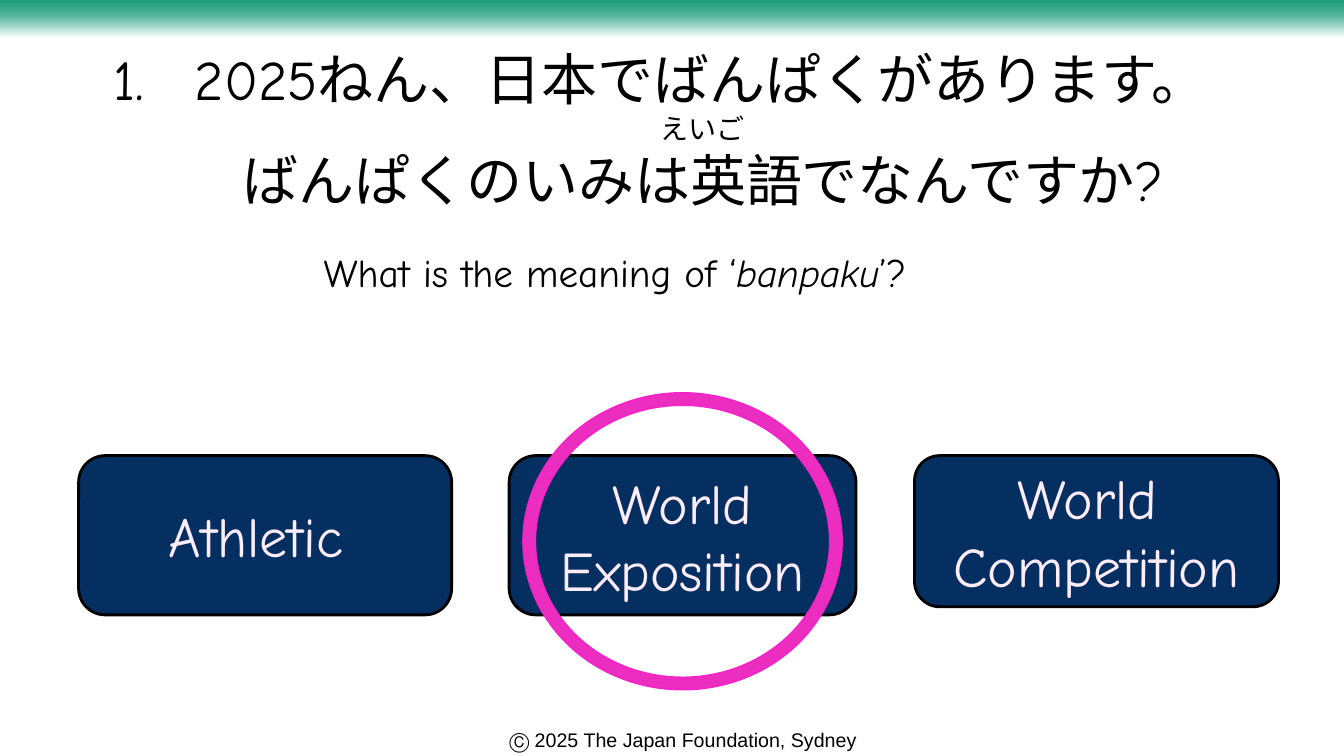
from copy import deepcopy
from lxml.etree import SubElement
from pptx import Presentation
from pptx.dml.color import RGBColor
from pptx.enum.shapes import MSO_SHAPE
from pptx.enum.text import MSO_ANCHOR, MSO_AUTO_SIZE, PP_ALIGN
from pptx.oxml.ns import qn
from pptx.util import Inches, Pt


def color(hex_code):
    return RGBColor.from_string(hex_code)


def add_text(paragraph, text, size, hex_code="000000", font="Comic Neue", italic=False):
    paragraph.alignment = PP_ALIGN.CENTER
    run = paragraph.add_run()
    run.text = text
    run.font.name = font
    run.font.size = Pt(size)
    run.font.italic = italic
    run.font.color.rgb = color(hex_code)


deck = Presentation()
deck.slide_width, deck.slide_height = Inches(13.33), Inches(7.5)
slide = deck.slides.add_slide(deck.slide_layouts[5])

# Background: white with a green band fading in at the top
background = slide.background.fill
background.gradient()
background.gradient_angle = 90
band = [(0.95, "FFFFFF"), (0.97, "87CBB9"), (0.98, "52B399"), (1, "1D9A78")]
stop_list = slide.element.find(".//" + qn("a:gsLst"))
for _ in band[2:]:
    stop_list.append(deepcopy(stop_list[0]))
for stop, (position, hex_code) in zip(background.gradient_stops, band):
    stop.color.rgb = color(hex_code)
    stop.position = position

# Copyright line
copyright_line = slide.shapes.add_textbox(Inches(2.65), Inches(7.17), Inches(8.25), Inches(0.33))
copyright_line.text_frame.word_wrap = True
copyright_line.text_frame.vertical_anchor = MSO_ANCHOR.MIDDLE
add_text(copyright_line.text_frame.paragraphs[0], "Ⓒ 2025 The Japan Foundation, Sydney", 14, font="Arial")

# Answer choices: left, width, height, lines
choices = [
    (0.78, 3.70, 1.58, ["Athletic "]),
    (5.05, 3.44, 1.58, ["World Exposition"]),
    (9.07, 3.61, 1.50, ["World ", "Competition"]),
]
for left, width, height, lines in choices:
    choice = slide.shapes.add_shape(
        MSO_SHAPE.ROUNDED_RECTANGLE, Inches(left), Inches(4.52), Inches(width), Inches(height))
    choice.shadow.inherit = False
    choice.fill.solid()
    choice.fill.fore_color.rgb = color("052F61")
    choice.line.color.rgb = color("000000")
    choice.line.width = Pt(2)
    frame = choice.text_frame
    frame.vertical_anchor = MSO_ANCHOR.MIDDLE
    for number, line in enumerate(lines):
        paragraph = frame.add_paragraph() if number else frame.paragraphs[0]
        add_text(paragraph, line, 40, "FDEDF9")

# English translation
translation = slide.shapes.add_textbox(Inches(0.52), Inches(2.41), Inches(11.16), Inches(0.57))
translation.text_frame.word_wrap = True
for text, italic in [("What is the meaning of ‘", False), ("banpaku", True), ("’?", False)]:
    add_text(translation.text_frame.paragraphs[0], text, 28, italic=italic)

# Ring around the correct answer
ring = slide.shapes.add_shape(MSO_SHAPE.DONUT, Inches(5.19), Inches(3.9), Inches(3.16), Inches(2.94))
ring.adjustments[0] = 0.04
ring.shadow.inherit = False
ring.fill.solid()
ring.fill.fore_color.rgb = color("EC2EC0")
ring.line.color.rgb = color("F226C6")
ring.line.width = Pt(1.5)

# Question with the reading of 英語 above it
question = slide.shapes.title
question.left, question.top = Inches(0.17), Inches(0.39)
question.width, question.height = Inches(12.76), Inches(1.78)
frame = question.text_frame
frame.word_wrap = True
frame.auto_size = MSO_AUTO_SIZE.NONE
frame.vertical_anchor = MSO_ANCHOR.TOP
sentence, reading, second_sentence = frame.paragraphs[0], frame.add_paragraph(), frame.add_paragraph()

numbering = sentence._p.get_or_add_pPr()
numbering.set("marL", str(Inches(0.81)))
numbering.set("indent", str(-Inches(0.81)))
SubElement(numbering, qn("a:buAutoNum"), type="arabicPeriod")
reading._p.get_or_add_pPr().set("marL", str(Inches(0.84)))

add_text(sentence, "2025ねん、日本でばんぱくがあります。", 40)
add_text(reading, "えいご", 20)
add_text(second_sentence, "ばんぱくのいみは英語でなんですか?", 40)

deck.save("out.pptx")
